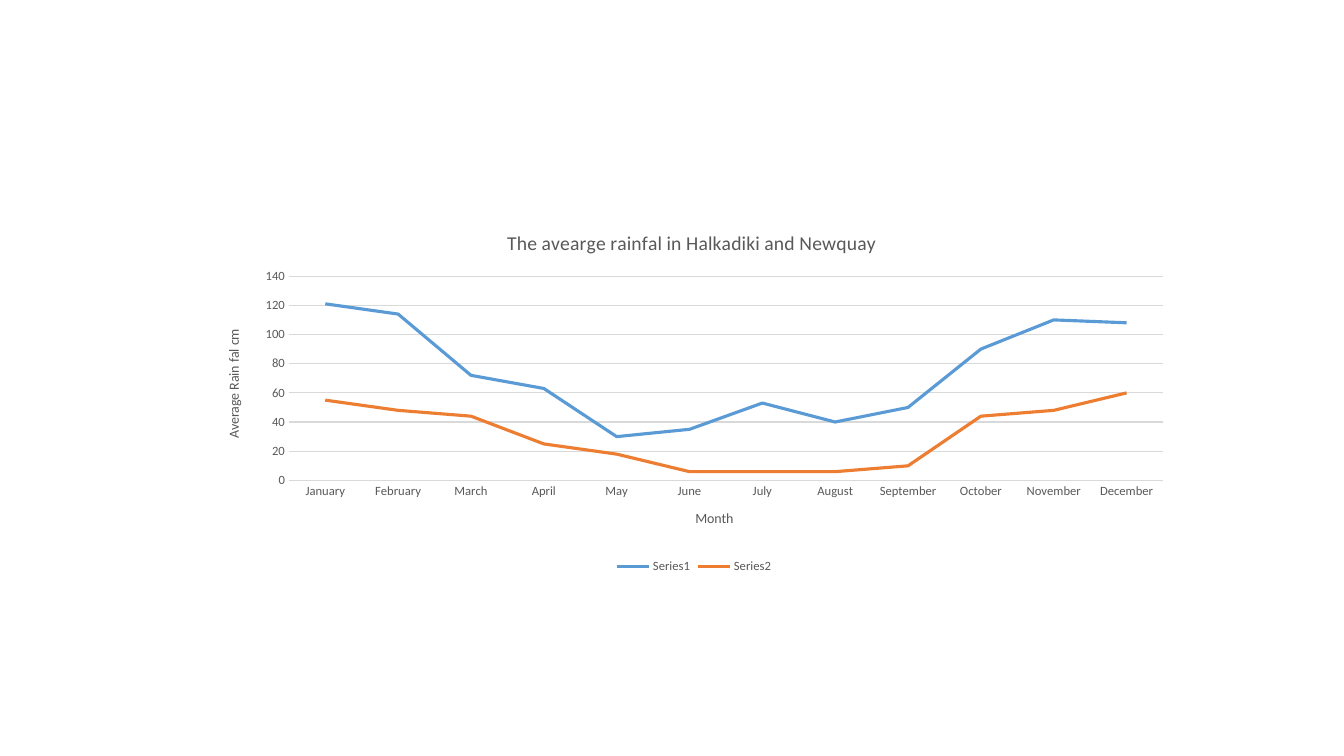
"""Build a slide with a line chart of monthly rainfall in two places."""
import pptx
import pptx.chart.data
import pptx.dml.color
import pptx.enum.chart
import pptx.oxml
import pptx.oxml.ns
import pptx.util

Pt = pptx.util.Pt
RGBColor = pptx.dml.color.RGBColor
GREY = RGBColor(0x59, 0x59, 0x59)
GRID = RGBColor(0xD9, 0xD9, 0xD9)
BLUE = RGBColor(0x5B, 0x9B, 0xD5)
ORANGE = RGBColor(0xED, 0x7D, 0x31)

MONTHS = ["January", "February", "March", "April", "May", "June", "July",
          "August", "September", "October", "November", "December"]
RAINFALL = {
    "Series1": (BLUE, [121, 114, 72, 63, 30, 35, 53, 40, 50, 90, 110, 108]),
    "Series2": (ORANGE, [55, 48, 44, 25, 18, 6, 6, 6, 10, 44, 48, 60]),
}


def set_font(font, size):
    font.name = "Calibri"
    font.size = Pt(size)
    font.bold = False
    font.color.rgb = GREY


def set_line(line, color, width):
    line.color.rgb = color
    line.width = Pt(width)


prs = pptx.Presentation()
prs.slide_width = pptx.util.Inches(13.33)
prs.slide_height = pptx.util.Inches(7.5)
s = prs.slides.add_slide(prs.slide_layouts[6])

data = pptx.chart.data.CategoryChartData()
data.categories = MONTHS
for name, (color, values) in RAINFALL.items():
    data.add_series(name, values)

left, top, width, height = (pptx.util.Inches(n) for n in (2.03, 2.11, 9.71, 3.62))
chart = s.shapes.add_chart(pptx.enum.chart.XL_CHART_TYPE.LINE,
                           left, top, width, height, data).chart
set_font(chart.font, 9)

plot = chart.plots[0]
plot.vary_by_categories = False
for series, (color, values) in zip(plot.series, RAINFALL.values()):
    series.smooth = False
    series.marker.style = pptx.enum.chart.XL_MARKER_STYLE.NONE
    set_line(series.format.line, color, 2.25)

months, rain = chart.category_axis, chart.value_axis
for axis in (months, rain):
    axis.major_tick_mark = pptx.enum.chart.XL_TICK_MARK.NONE
    axis.minor_tick_mark = pptx.enum.chart.XL_TICK_MARK.NONE
    set_font(axis.tick_labels.font, 9)
set_line(months.format.line, GRID, 0.75)
rain.format.line.fill.background()
rain.minimum_scale, rain.maximum_scale, rain.major_unit = 0, 140, 20
rain.has_major_gridlines = True
set_line(rain.major_gridlines.format.line, GRID, 0.75)

for owner, text, size in ((chart, "The avearge rainfal in Halkadiki and Newquay ", 14),
                          (months, "Month", 10),
                          (rain, "Average Rain fal cm", 10)):
    owner.has_title = True
    tf = (chart.chart_title if owner is chart else owner.axis_title).text_frame
    tf.text = text
    set_font(tf.paragraphs[0].runs[0].font, size)
chart.chart_title.include_in_layout = False

chart.has_legend = True
chart.legend.position = pptx.enum.chart.XL_LEGEND_POSITION.BOTTOM
chart.legend.include_in_layout = False
set_font(chart.legend.font, 9)

area = chart.element.chart.plotArea
for old in area.findall(pptx.oxml.ns.qn("c:layout")):
    area.remove(old)
area.insert(0, pptx.oxml.parse_xml(
    f'<c:layout {pptx.oxml.ns.nsdecls("c")}><c:manualLayout>'
    '<c:layoutTarget val="inner"/><c:xMode val="edge"/><c:yMode val="edge"/>'
    '<c:x val="0.086"/><c:y val="0.174"/><c:w val="0.893"/><c:h val="0.56"/>'
    '</c:manualLayout></c:layout>'))

prs.save("out.pptx")
